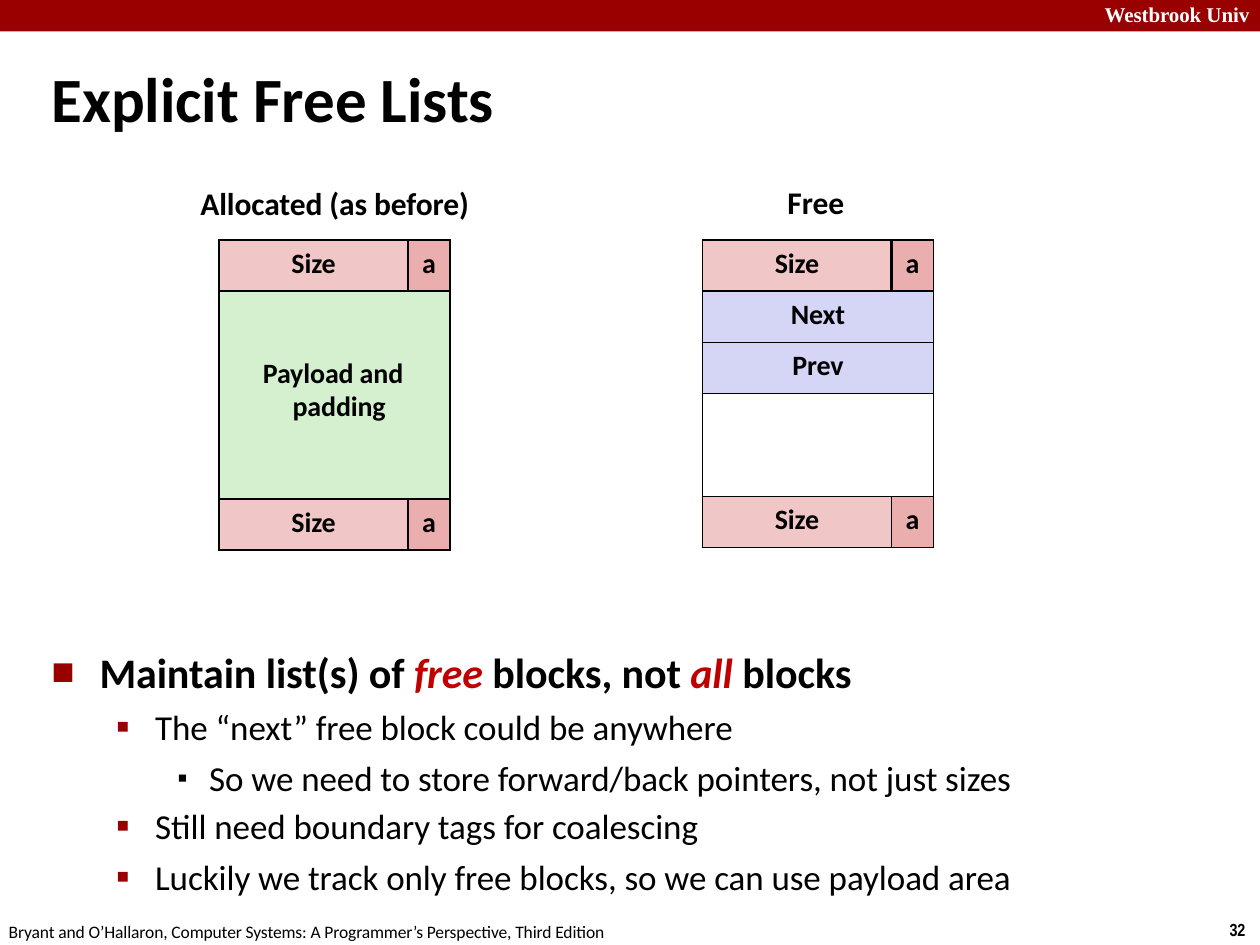
from lxml.etree import SubElement
from pptx import Presentation
from pptx.dml.color import RGBColor as RGB
from pptx.enum.shapes import MSO_SHAPE as Shape
from pptx.enum.text import MSO_ANCHOR as Anchor, MSO_AUTO_SIZE as AutoSize, PP_ALIGN as Align
from pptx.oxml.ns import qn
from pptx.util import Pt

COLORS = {
    "band": "990000", "accent": "C00000", "black": "000000", "white": "FFFFFF",
    "size": "F0C6C6", "flag": "EBAEAE", "payload": "D4F0CF", "pointer": "D5D5F5",
}


def color(name):
    return RGB.from_string(COLORS[name])


def write(paragraph, text, size, ink="black", **formats):
    run = paragraph.add_run()
    run.text = text
    run.font.color.rgb = color(ink)
    for key, value in {"name": "Calibri", "size": Pt(size), "bold": False, **formats}.items():
        setattr(run.font, key, value)
    run.font._element.set("spc", "-5")


prs = Presentation()
prs.slide_width, prs.slide_height = Pt(720), Pt(540)
slide = prs.slides.add_slide(prs.slide_layouts[5])
shapes = slide.shapes

# Header band
band = shapes.add_shape(Shape.RECTANGLE, 0, 0, Pt(720), Pt(18))
band.shadow.inherit = False
band.fill.solid()
band.fill.fore_color.rgb = color("band")
band.line.fill.background()

# Title, header, footer and captions
bold = {"bold": True}
labels = [
    (shapes.title, "Explicit Free Lists", (29.5, 33.1, 300, 45.4), 36, "black", Align.LEFT, bold),
    (None, "Westbrook Univ", (620, 0, 94, 16.6), 12, "white", Align.RIGHT,
     {"bold": True, "name": "Times New Roman"}),
    (None, "32", (700.6, 524.2, 13, 13.7), 10, "black", Align.CENTER,
     {"bold": True, "name": "Arial Narrow"}),
    (None, "Bryant and O’Hallaron, Computer Systems: A Programmer’s Perspective, Third Edition",
     (5, 525.2, 360, 12.2), 10, "black", Align.LEFT, {}),
    (None, "Allocated (as before)", (114.5, 104.4, 160, 23.8), 18, "black", Align.LEFT, bold),
    (None, "Free", (450, 103.7, 36, 23.8), 18, "black", Align.LEFT, bold),
]
for box, text, place, size, ink, align, formats in labels:
    left, top, width, height = map(Pt, place)
    if box is None:
        box = shapes.add_textbox(left, top, width, height)
    box.left, box.top, box.width, box.height = left, top, width, height
    frame = box.text_frame
    for key, value in {"margin_left": 0, "margin_right": 0, "margin_top": Pt(1),
                       "margin_bottom": 0, "word_wrap": True, "auto_size": AutoSize.NONE,
                       "vertical_anchor": Anchor.TOP}.items():
        setattr(frame, key, value)
    frame.paragraphs[0].alignment = align
    write(frame.paragraphs[0], text, size, ink, **formats)

# Memory blocks: rows of (height, first text, first fill, flag text)
TAG = (29.2, "Size", "size", "a")
blocks = [
    (125.2, [TAG, (118.8, "Payload and padding", "payload", None), TAG]),
    (401.4, [TAG, (29.2, "Next", "pointer", None), (29.2, "Prev", "pointer", None),
             (58.8, "", None, None), TAG]),
]
for left, rows in blocks:
    block = shapes.add_table(len(rows), 2, Pt(left), Pt(137.2), Pt(132),
                             Pt(sum(row[0] for row in rows))).table
    block.first_row = block.horz_banding = False
    block.columns[0].width, block.columns[1].width = Pt(108), Pt(24)
    for r, (height, text, fill, flag) in enumerate(rows):
        block.rows[r].height = Pt(height)
        if flag is None:
            block.cell(r, 0).merge(block.cell(r, 1))
        for c, (words, tint) in enumerate([(text, fill), (flag, "flag" if flag else fill)]):
            cell = block.cell(r, c)
            cell.margin_left = cell.margin_right = cell.margin_bottom = 0
            cell.margin_top = Pt(3.6)
            # Borders, with a heavier divider in the top row
            for side in ("lnL", "lnR", "lnT", "lnB"):
                divider = r == 0 and side == ("lnR", "lnL")[c]
                border = SubElement(cell._tc.get_or_add_tcPr(), qn(f"a:{side}"),
                                    w=str(Pt(1.5 if divider else 1)))
                SubElement(SubElement(border, qn("a:solidFill")), qn("a:srgbClr"),
                           val=COLORS["black"])
            if tint:
                cell.fill.solid()
                cell.fill.fore_color.rgb = color(tint)
            else:
                cell.fill.background()
            if not words:
                continue
            line = cell.text_frame.paragraphs[0]
            if tint == "payload":
                cell.vertical_anchor = Anchor.MIDDLE
                cell.margin_bottom = Pt(8)
                line.line_spacing = Pt(18.7)
                props = line._p.get_or_add_pPr()
                props.set("marL", str(Pt(42)))
                props.set("indent", str(Pt(-17)))
            else:
                line.alignment = Align.CENTER
                line.space_before = Pt(3.8)
            write(line, words, 16, bold=True)

# Bulleted points: level -> margin, indent, bullet, bullet size, bullet colour, text size
LEVELS = [
    (28.1, -27.4, "■", 58, "band", 24),
    (59.8, -22.3, "▪", 110, "band", 20),
    (90.7, -18, "▪", 80, "black", 20),
]
points = [
    (0, 4.1, ["Maintain list(s) of ", "free", " blocks, not ", "all", " blocks"]),
    (1, 4.8, ["The “next” free block could be anywhere"]),
    (2, 5.4, ["So we need to store forward/back pointers, not just sizes"]),
    (1, 3.5, ["Still need boundary tags for coalescing"]),
    (1, 4.8, ["Luckily we track only free blocks, so we can use payload area"]),
]
body = shapes.add_textbox(Pt(28.8), Pt(365), Pt(580), Pt(149)).text_frame
body.word_wrap = True
body.margin_left = body.margin_right = body.margin_bottom = 0
body.margin_top = Pt(4.3)
for i, (level, before, parts) in enumerate(points):
    margin, indent, bullet, percent, ink, size = LEVELS[level]
    point = body.add_paragraph() if i else body.paragraphs[0]
    point.level = level
    point.space_before = Pt(before)
    props = point._p.get_or_add_pPr()
    props.set("marL", str(Pt(margin)))
    props.set("indent", str(Pt(indent)))
    SubElement(SubElement(props, qn("a:buClr")), qn("a:srgbClr"), val=COLORS[ink])
    SubElement(props, qn("a:buSzPct"), val=str(percent * 1000))
    SubElement(props, qn("a:buFont"), typeface="Calibri")
    SubElement(props, qn("a:buChar"), char=bullet)
    for n, part in enumerate(parts):
        stressed = n % 2 == 1
        write(point, part, size, "accent" if stressed else "black",
              bold=level == 0, italic=stressed)

prs.save("out.pptx")
